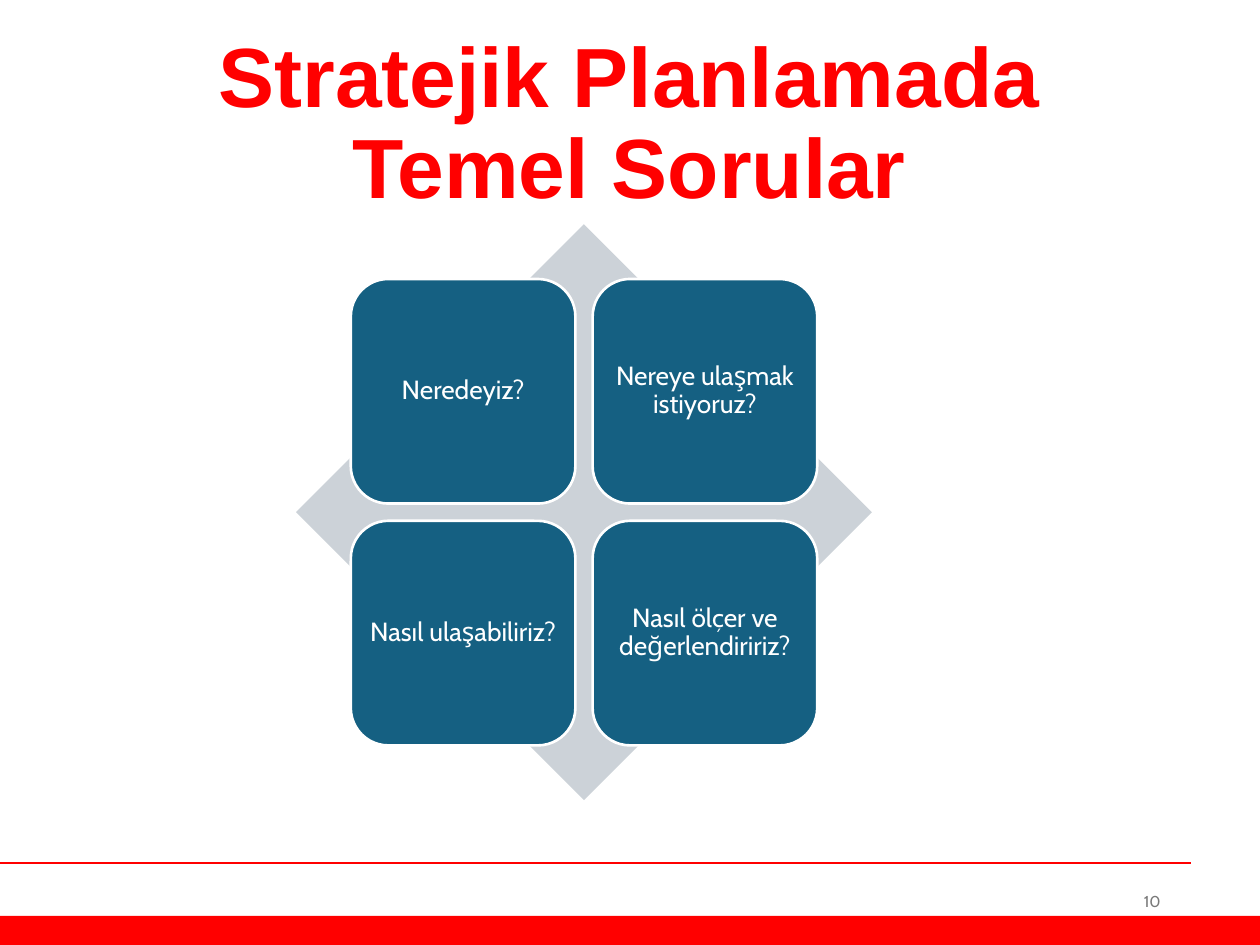
from pptx import Presentation
from pptx.dml.color import RGBColor
from pptx.enum.shapes import MSO_CONNECTOR, MSO_SHAPE
from pptx.enum.text import MSO_ANCHOR, PP_ALIGN
from pptx.oxml.ns import qn
from pptx.util import Inches, Pt
from lxml.etree import SubElement

RED, GREY, BLUE, WHITE = "FF0000", "CCD2D8", "156082", "FFFFFF"
QUESTIONS = [
    "Neredeyiz?",
    "Nereye ulaşmak istiyoruz?",
    "Nasıl ulaşabiliriz?",
    "Nasıl ölçer ve değerlendiririz?",
]


def rgb(value):
    """Turn a hex string into a colour."""
    return RGBColor.from_string(value)


def set_text(sp, text, size, font, color, align, anchor, bold=False):
    """Write one formatted paragraph into a shape and return it."""
    tf = sp.text_frame
    tf.word_wrap = True
    tf.vertical_anchor = anchor
    p = tf.paragraphs[0]
    p.text = text
    p.alignment = align
    p.font.size = Pt(size)
    p.font.name = font
    p.font.bold = bold
    p.font.color.rgb = rgb(color)
    return p


def add_shape(shapes, kind, x, y, w, h, fill, line=None):
    """Add a flat preset shape at a place given in inches."""
    sp = shapes.add_shape(kind, Inches(x), Inches(y), Inches(w), Inches(h))
    sp.shadow.inherit = False
    sp.fill.solid()
    sp.fill.fore_color.rgb = rgb(fill)
    if line:
        sp.line.color.rgb = rgb(line)
        sp.line.width = Pt(1.5)
    else:
        sp.line.fill.background()
    return sp


def add_title(slide, x, y, w, h):
    """Place the title so that it ends one line above the box bottom."""
    sp = slide.shapes.title
    sp.left, sp.top, sp.width, sp.height = map(Inches, (x, y, w, h))
    p = set_text(sp, "Stratejik Planlamada Temel Sorular", 48, "Arial", RED,
                 PP_ALIGN.CENTER, MSO_ANCHOR.BOTTOM, bold=True)
    p.line_spacing = 0.9
    sp.text_frame.margin_bottom = Inches(0.77)


def add_matrix(slide, x, y, size):
    """Draw a diamond with four question cards in a two by two grid."""
    shapes = slide.shapes.add_group_shape().shapes
    add_shape(shapes, MSO_SHAPE.DIAMOND, x, y, size, size, GREY)
    card, inset = 0.39 * size, 0.095 * size
    step = size - 2 * inset - card
    for i, question in enumerate(QUESTIONS):
        row, col = divmod(i, 2)
        sp = add_shape(shapes, MSO_SHAPE.ROUNDED_RECTANGLE,
                       x + inset + col * step, y + inset + row * step,
                       card, card, BLUE, WHITE)
        p = set_text(sp, question, 15, "Cabin", WHITE,
                     PP_ALIGN.CENTER, MSO_ANCHOR.MIDDLE)
        p.line_spacing = 0.9
        tf = sp.text_frame
        tf.margin_left = tf.margin_right = Inches(0.06)
        tf.margin_top = tf.margin_bottom = Inches(0.06)


def add_footer(slide, x, y, w, h):
    """Draw the bottom bar, the rule and the page number."""
    bar = 0.23
    add_shape(slide.shapes, MSO_SHAPE.RECTANGLE, x, y + h - bar, w, bar, RED)
    rule = slide.shapes.add_connector(MSO_CONNECTOR.STRAIGHT, Inches(x),
                                      Inches(y), Inches(x + 9.45), Inches(y))
    rule.line.color.rgb = rgb(RED)
    rule.line.width = Pt(1.5)
    SubElement(rule._element.spPr, qn("a:effectLst"))
    number = slide.shapes.add_textbox(Inches(x + 7.06), Inches(y + 0.1),
                                      Inches(2.25), Inches(0.4))
    set_text(number, "10", 9, "Cabin", "797979",
             PP_ALIGN.RIGHT, MSO_ANCHOR.MIDDLE)


def main():
    """Build the slide and save it."""
    prs = Presentation()
    prs.slide_width, prs.slide_height = Inches(10), Inches(7.5)
    slide = prs.slides.add_slide(prs.slide_layouts[5])
    add_footer(slide, 0, 6.85, 10, 0.65)
    add_title(slide, 1.61, 0.16, 6.77, 2.33)
    add_matrix(slide, 2.35, 1.78, 4.57)
    prs.save("out.pptx")


if __name__ == "__main__":
    main()
